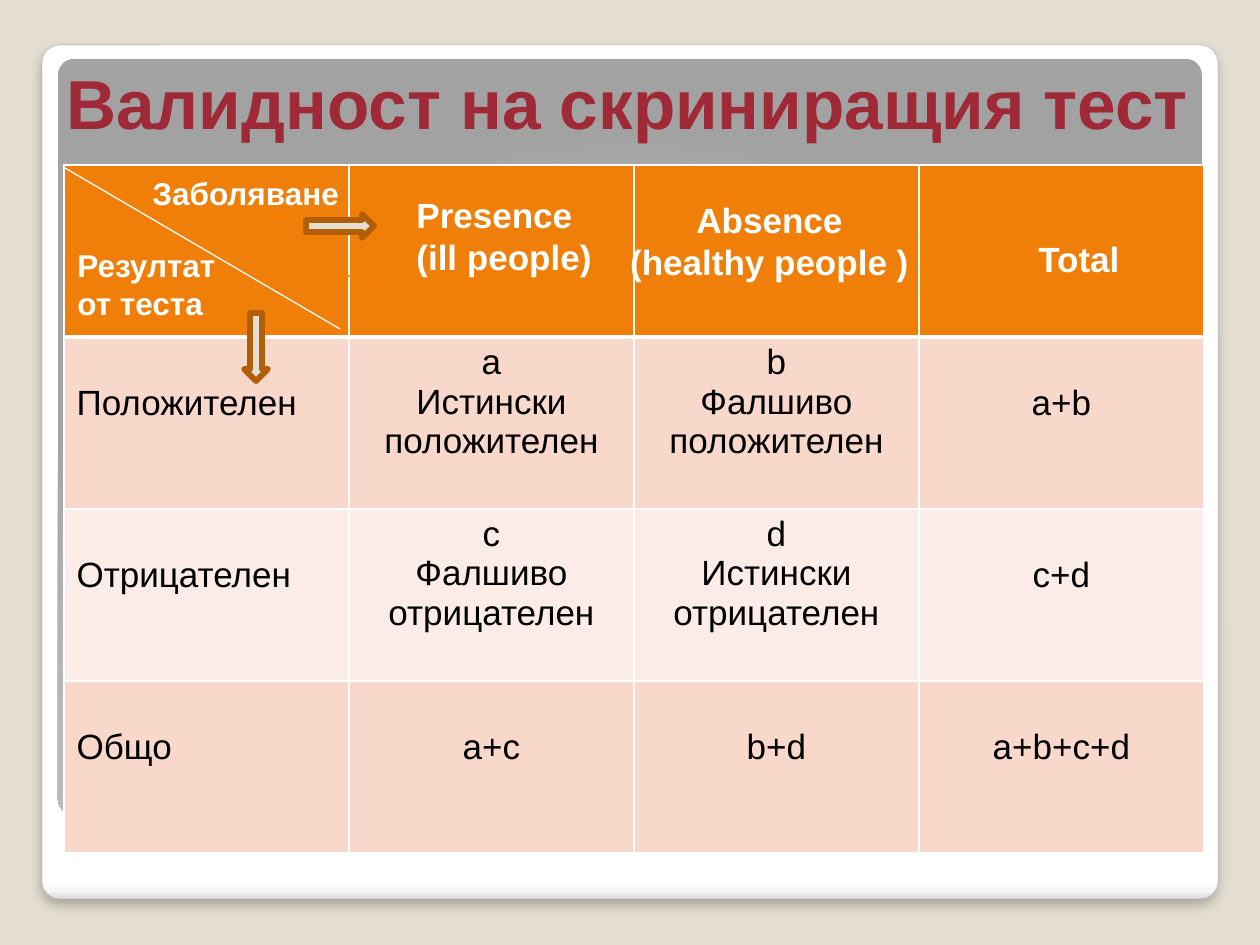
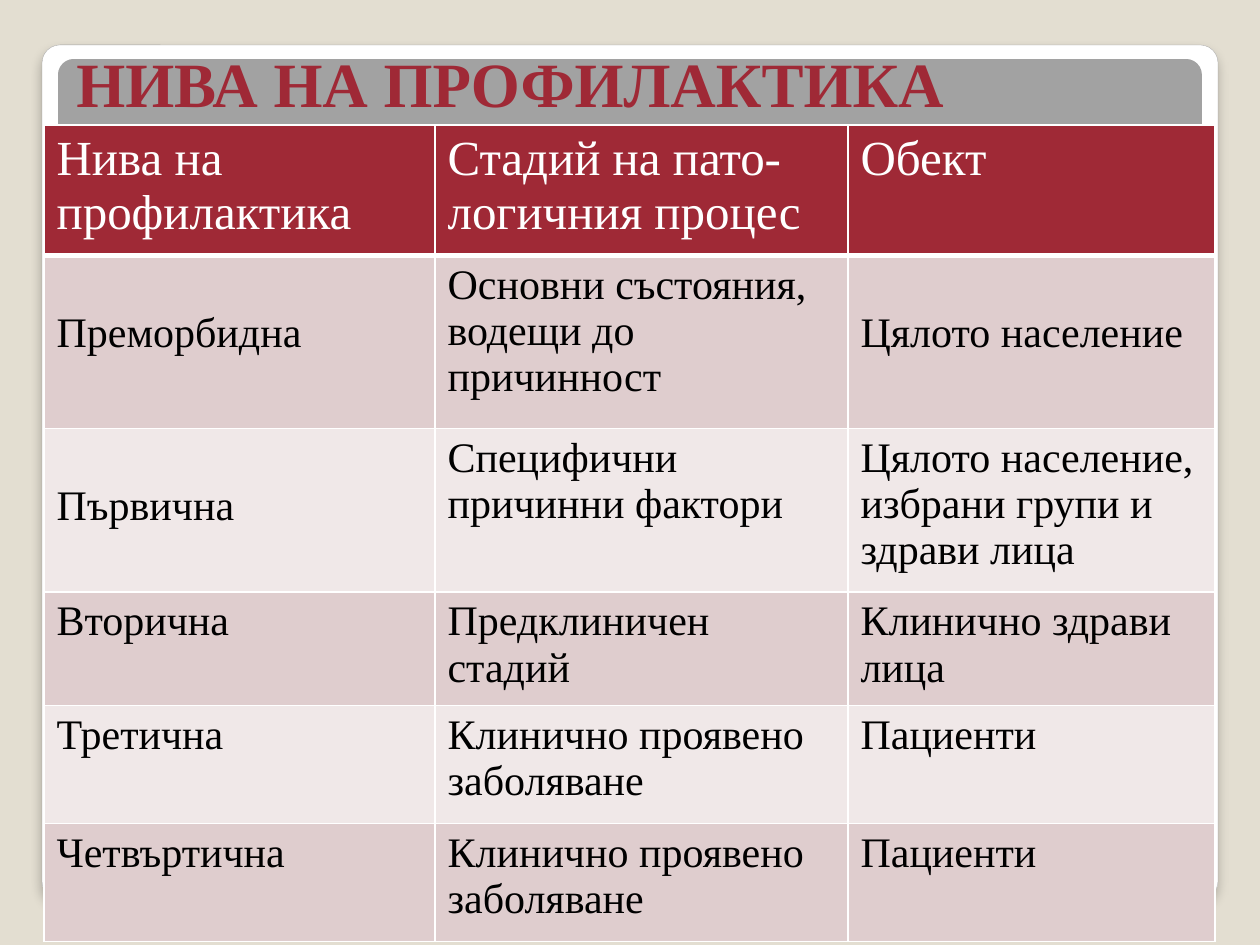
from dataclasses import dataclass

from pptx import Presentation
from pptx.dml.color import RGBColor
from pptx.enum.shapes import MSO_CONNECTOR as Line, MSO_SHAPE as Shape
from pptx.enum.text import MSO_ANCHOR as Anchor, PP_ALIGN as Align
from pptx.oxml import parse_xml
from pptx.util import Emu, Pt

A_NS = 'xmlns:a="http://schemas.openxmlformats.org/drawingml/2006/main"'
PX_PER_INCH = 126


@dataclass(frozen=True)
class Theme:
    page: str = "E3DED1"
    red: str = "9F2936"
    orange: str = "F07F09"
    line_orange: str = "F97F00"
    brown: str = "B25E07"
    white: str = "FFFFFF"
    black: str = "000000"
    panel_edge: str = "A4A4A4"
    sans: str = "Arial"
    serif: str = "Times New Roman"
    label: int = 18
    body: int = 20
    serif_body: int = 24
    serif_head: int = 28


T = Theme()

PANEL = dict(
    box=(42, 45, 1176, 854),
    stops=[(0, "FFFFFF"), (98, "FFFFFF"), (99, "F7F7F7"), (100, "DADADA")],
    direction='<a:lin ang="5400000" scaled="0"/>',
)
GLOW = dict(
    box=(58, 59, 1144, 756),
    stops=[(0, "FFFFFF"), (55, "E1E1E1"), (100, "A2A2A2")],
    direction='<a:path path="circle"><a:fillToRect l="50000" t="175000" '
              'r="50000" b="-75000"/></a:path>',
)

VALIDITY = dict(
    title=("Валидност на скриниращия тест", (54, 10, 1171, 140), T.sans, 39.6),
    at=(64, 165), cols=[285] * 4, rows=[172] * 4,
    cells=[
        ["", "", "", ""],
        ["Положителен", "a\nИстински\nположителен", "b\nФалшиво положителен", "a+b"],
        ["Отрицателен", "c\nФалшиво отрицателен", "d\nИстински отрицателен", "c+d"],
        ["Общо", "a+c", "b+d", "a+b+c+d"],
    ],
    # cells whose text starts one line lower
    lowered={(1, 0), (1, 3), (2, 0), (2, 3), (3, 0), (3, 1), (3, 2), (3, 3)},
    fills=(T.orange, "F9D8CC", "FCECE7"),
    font=T.sans, head_size=T.body, size=T.body, align=Align.CENTER,
)
HEADINGS = [
    ("Заболяване", (140, 168, 229, 50), T.label, Align.LEFT, Anchor.TOP),
    ("Резултат от теста", (65, 240, 186, 89), T.label, Align.LEFT, Anchor.TOP),
    ("Presence\n(ill people)", (404, 187, 218, 97), T.body, Align.LEFT, Anchor.TOP),
    ("Absence\n(healthy people )", (614, 192, 311, 97), T.body, Align.CENTER, Anchor.TOP),
    ("Total", (1026, 231, 139, 55), T.body, Align.LEFT, Anchor.MIDDLE),
]
HEADER_LINES = [
    ((203, 204), (451, 244), T.line_orange),
    ((263, 244), (451, 314), T.line_orange),
    ((65, 168), (340, 329), T.white),
]
ARROWS = [((306, 214, 68, 24), 0), ((222, 335, 68, 24), 90)]

LEVELS = dict(
    title=("НИВА НА ПРОФИЛАКТИКА", (64, 16, 1147, 110), T.serif, 36),
    at=(44, 125), cols=[391, 413, 367], rows=[128, 173, 152, 106, 118, 118],
    cells=[
        ["Нива на профилактика", "Стадий на пато-логичния процес", "Обект"],
        ["Преморбидна", "Основни състояния, водещи до причинност", "Цялото население"],
        ["Първична", "Специфични причинни фактори",
         "Цялото население, избрани групи и здрави лица"],
        ["Вторична", "Предклиничен стадий", "Клинично здрави лица"],
        ["Третична", "Клинично проявено заболяване", "Пациенти"],
        ["Четвъртична", "Клинично проявено заболяване", "Пациенти"],
    ],
    lowered={(1, 0), (1, 2), (2, 0)},
    fills=(T.red, "DFCDCE", "F0E8E8"),
    font=T.serif, head_size=T.serif_head, size=T.serif_body, align=Align.LEFT,
)


def px(n):
    return Emu(round(n * 914400 / PX_PER_INCH))


def place(box):
    return [px(n) for n in box]


def rgb(color):
    return RGBColor.from_string(color)


def solid(fill, color):
    fill.solid()
    fill.fore_color.rgb = rgb(color)


def write(tf, text, font, size, color, bold=False, align=Align.LEFT):
    tf.word_wrap = True
    tf.text = text
    for p in tf.paragraphs:
        p.alignment = align
        p.font.name, p.font.size, p.font.bold = font, Pt(size), bold
        p.font.color.rgb = rgb(color)


def add_text(slide, text, box, font, size, color, align=Align.LEFT, anchor=Anchor.TOP):
    tf = slide.shapes.add_textbox(*place(box)).text_frame
    tf.vertical_anchor = anchor
    write(tf, text, font, size, color, True, align)


def add_shape(slide, kind, box, line, width):
    sp = slide.shapes.add_shape(kind, *place(box))
    sp.shadow.inherit = False
    sp.line.color.rgb = rgb(line)
    sp.line.width = Pt(width)
    return sp


def add_panel(slide, box, stops, direction):
    """Rounded backing panel with a gradient fill."""
    sp = add_shape(slide, Shape.ROUNDED_RECTANGLE, box, T.panel_edge, 0.16)
    sp.adjustments[0] = 0.021
    stop_xml = "".join(f'<a:gs pos="{pos * 1000}"><a:srgbClr val="{color}"/></a:gs>'
                       for pos, color in stops)
    geometry = sp._element.spPr.find("{*}prstGeom")
    geometry.addnext(parse_xml(
        f'<a:gradFill {A_NS} rotWithShape="1"><a:gsLst>{stop_xml}</a:gsLst>'
        f'{direction}</a:gradFill>'))
    return sp


def add_backdrop(slide):
    panel = add_panel(slide, **PANEL)
    panel._element.spPr.find("{*}effectLst").append(parse_xml(
        f'<a:outerShdw {A_NS} blurRad="{Pt(6)}" dist="{Pt(4)}" dir="5400000" '
        f'algn="t" rotWithShape="0"><a:srgbClr val="{T.black}">'
        '<a:alpha val="25000"/></a:srgbClr></a:outerShdw>'))
    add_panel(slide, **GLOW).line.fill.background()


def set_borders(cell, row):
    """White cell borders, thicker between the header and the body."""
    widths = dict(L=1, R=1, T=3 if row == 1 else 1, B=3 if row == 0 else 1)
    tc_pr = cell._tc.get_or_add_tcPr()
    for i, (side, width) in enumerate(widths.items()):
        tc_pr.insert(i, parse_xml(
            f'<a:ln{side} {A_NS} w="{Pt(width)}"><a:solidFill>'
            f'<a:srgbClr val="{T.white}"/></a:solidFill></a:ln{side}>'))


def add_grid(slide, data):
    rows, cols = data["rows"], data["cols"]
    box = (*data["at"], sum(cols), sum(rows))
    table = slide.shapes.add_table(len(rows), len(cols), *place(box)).table
    table.first_row = table.horz_banding = False
    for col, width in zip(table.columns, cols):
        col.width = px(width)
    line_height = Pt(data["size"] * 1.15)
    head, odd, even = data["fills"]
    for r, (height, texts) in enumerate(zip(rows, data["cells"])):
        table.rows[r].height = px(height)
        for c, text in enumerate(texts):
            cell = table.cell(r, c)
            solid(cell.fill, head if r == 0 else odd if r % 2 else even)
            set_borders(cell, r)
            if (r, c) in data["lowered"]:
                cell.margin_top += line_height
            write(cell.text_frame, text, data["font"],
                  data["size"] if r else data["head_size"],
                  T.black if r else T.white,
                  align=data["align"] if c else Align.LEFT)


def add_line(slide, start, end, color):
    line = slide.shapes.add_connector(Line.STRAIGHT, *place(start + end))
    line.line.color.rgb = rgb(color)
    line.line.width = Pt(0.75)
    line._element.spPr.append(parse_xml(f"<a:effectLst {A_NS}/>"))


def add_arrow(slide, box, rotation):
    sp = add_shape(slide, Shape.RIGHT_ARROW, box, T.brown, 3.35)
    solid(sp.fill, T.page)
    sp.rotation = rotation


def add_table_slide(prs, data):
    slide = prs.slides.add_slide(prs.slide_layouts[6])
    add_backdrop(slide)
    add_text(slide, *data["title"], T.red, anchor=Anchor.BOTTOM)
    add_grid(slide, data)
    return slide


def main():
    prs = Presentation()
    prs.slide_width, prs.slide_height = px(1260), px(945)
    solid(prs.slide_master.background.fill, T.page)

    slide = add_table_slide(prs, VALIDITY)
    for line in HEADER_LINES:
        add_line(slide, *line)
    for text, box, size, align, anchor in HEADINGS:
        add_text(slide, text, box, T.sans, size, T.white, align, anchor)
    for arrow in ARROWS:
        add_arrow(slide, *arrow)

    add_table_slide(prs, LEVELS)
    prs.save("out.pptx")


if __name__ == "__main__":
    main()
